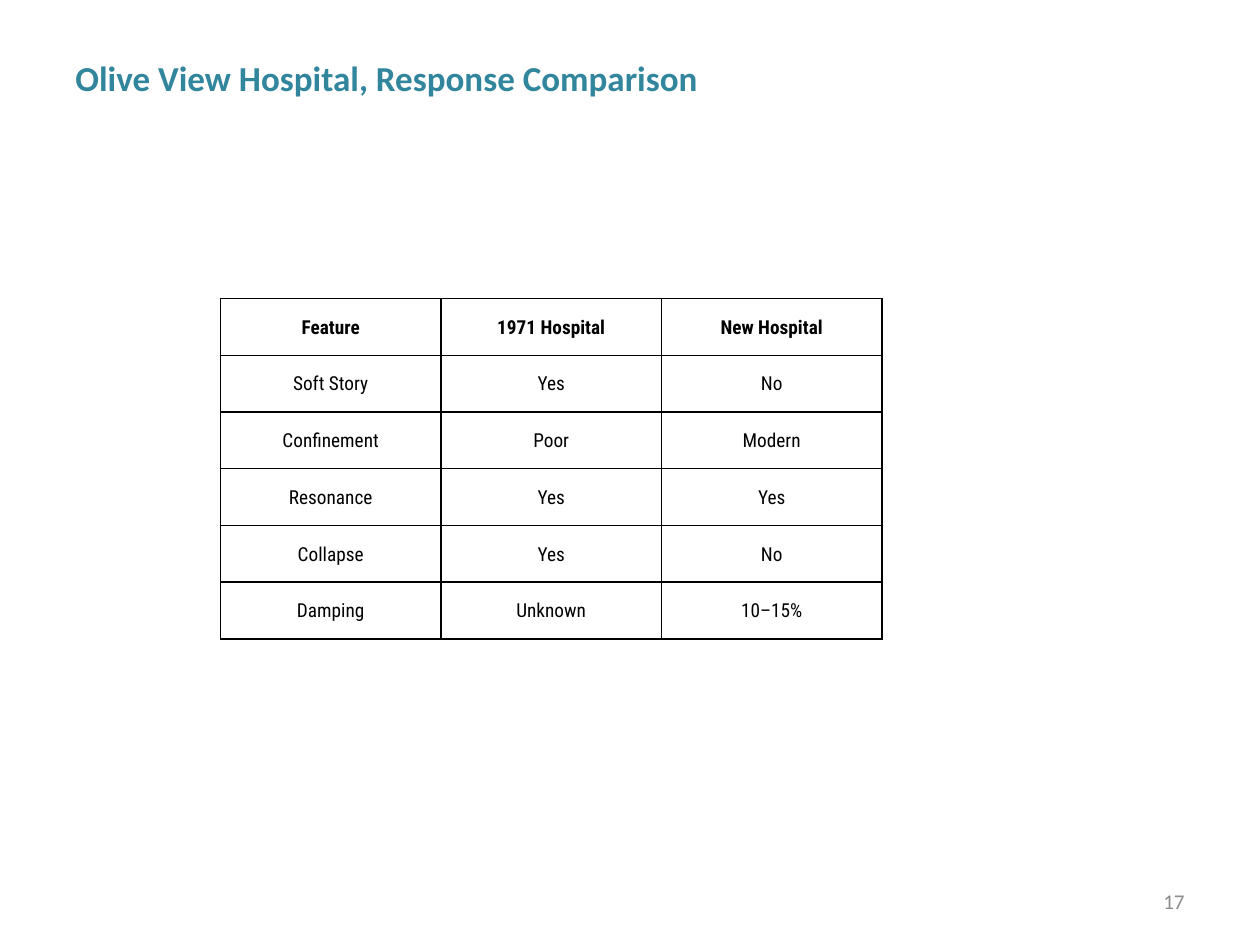
import lxml.etree
import pptx
import pptx.dml.color
import pptx.enum.text
import pptx.oxml.ns
import pptx.util

TEAL = pptx.dml.color.RGBColor(0x31, 0x85, 0x9C)
GREY = pptx.dml.color.RGBColor(0x8C, 0x8C, 0x8C)
BLACK = pptx.dml.color.RGBColor(0, 0, 0)
WHITE = pptx.dml.color.RGBColor(0xFF, 0xFF, 0xFF)

ALIGN = pptx.enum.text.PP_ALIGN
ANCHOR = pptx.enum.text.MSO_ANCHOR

FEATURES = [
    ("Feature", "1971 Hospital", "New Hospital"),
    ("Soft Story", "Yes", "No"),
    ("Confinement", "Poor", "Modern"),
    ("Resonance", "Yes", "Yes"),
    ("Collapse", "Yes", "No"),
    ("Damping", "Unknown", "10–15%"),
]


def write(frame, text, size, color, font="Calibri", bold=False,
          align=ALIGN.LEFT, space_after=0):
    paragraph = frame.paragraphs[0]
    paragraph.alignment = align
    paragraph.space_after = pptx.util.Pt(space_after)
    run = paragraph.add_run()
    run.text = text
    run.font.name = font
    run.font.size = pptx.util.Pt(size)
    run.font.bold = bold
    run.font.color.rgb = color


class Page:
    """A slide divided into a grid of quarter-inch squares."""
    unit = 0.25
    table_font = "Roboto Condensed"
    border_width = 1

    def __init__(self, slide):
        self.slide = slide

    def grid(self, *squares):
        return [pptx.util.Inches(count * self.unit) for count in squares]

    def label(self, area, text, anchor=ANCHOR.TOP, **style):
        frame = self.slide.shapes.add_textbox(*self.grid(*area)).text_frame
        frame.word_wrap = True
        frame.vertical_anchor = anchor
        write(frame, text, **style)

    def border(self, cell):
        properties = cell._tc.get_or_add_tcPr()
        qn = pptx.oxml.ns.qn
        for position, side in enumerate(("lnL", "lnR", "lnT", "lnB")):
            line = lxml.etree.Element(qn(f"a:{side}"))
            line.set("w", str(pptx.util.Pt(self.border_width)))
            fill = lxml.etree.SubElement(line, qn("a:solidFill"))
            lxml.etree.SubElement(fill, qn("a:srgbClr")).set("val", str(BLACK))
            properties.insert(position, line)

    def table(self, area, rows):
        table = self.slide.shapes.add_table(
            len(rows), len(rows[0]), *self.grid(*area)).table
        table.first_row = False
        table.horz_banding = False
        inset = pptx.util.Inches(0.01)
        for row, values in enumerate(rows):
            for column, value in enumerate(values):
                cell = table.cell(row, column)
                cell.fill.solid()
                cell.fill.fore_color.rgb = WHITE
                cell.margin_left = cell.margin_right = cell.margin_top = inset
                cell.margin_bottom = 0
                cell.vertical_anchor = ANCHOR.MIDDLE
                self.border(cell)
                write(cell.text_frame, value, 11, BLACK, font=self.table_font,
                      bold=row == 0, align=ALIGN.CENTER)


def main():
    deck = pptx.Presentation()
    deck.slide_width = pptx.util.Inches(10)
    deck.slide_height = pptx.util.Inches(7.5)
    page = Page(deck.slides.add_slide(deck.slide_layouts[6]))

    # Page number
    page.label((28.68, 27.8, 9.32, 1.6), "17", anchor=ANCHOR.MIDDLE,
               size=12, color=GREY, align=ALIGN.RIGHT)

    # Title
    page.label((2, 1.6, 28.32, 3.32), "Olive View Hospital, Response Comparison",
               size=20, color=TEAL, bold=True, space_after=1.5)

    # Comparison of the two hospitals
    page.table((7, 9.48, 21, 10.8), FEATURES)

    deck.save("out.pptx")


if __name__ == "__main__":
    main()
